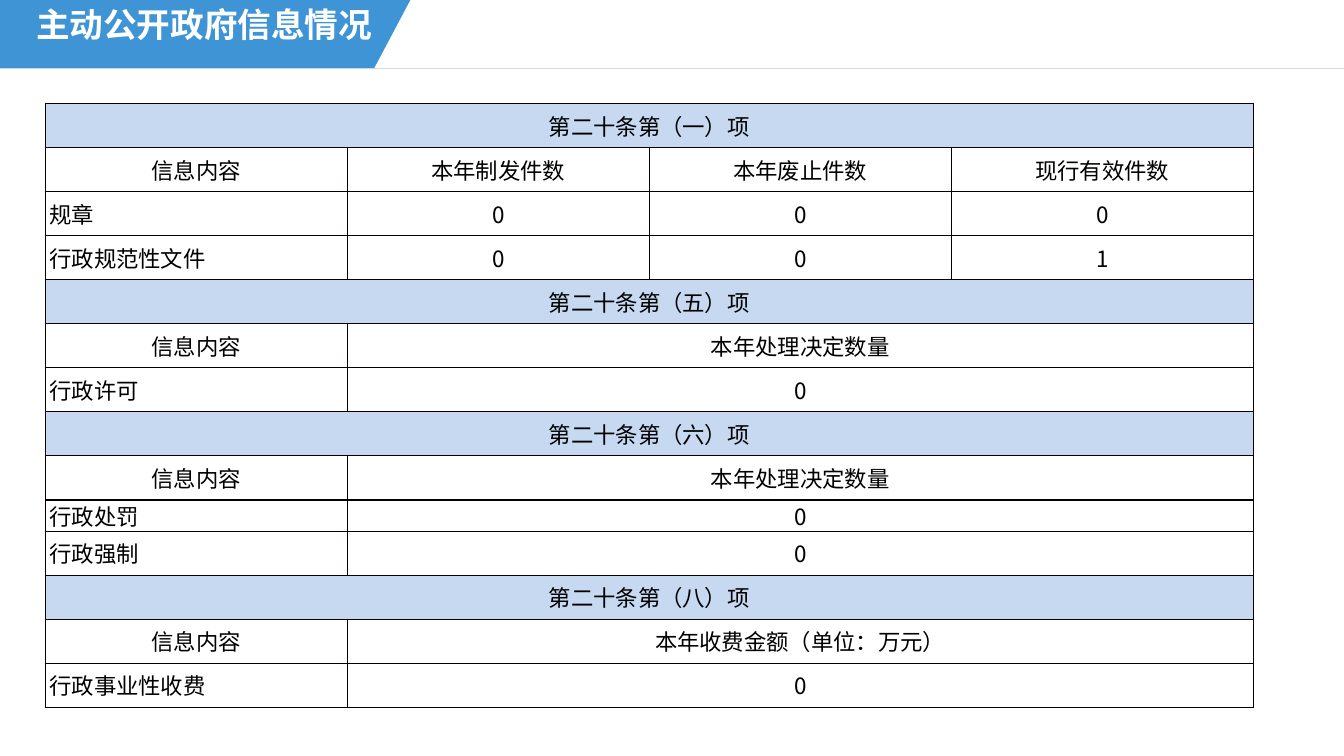
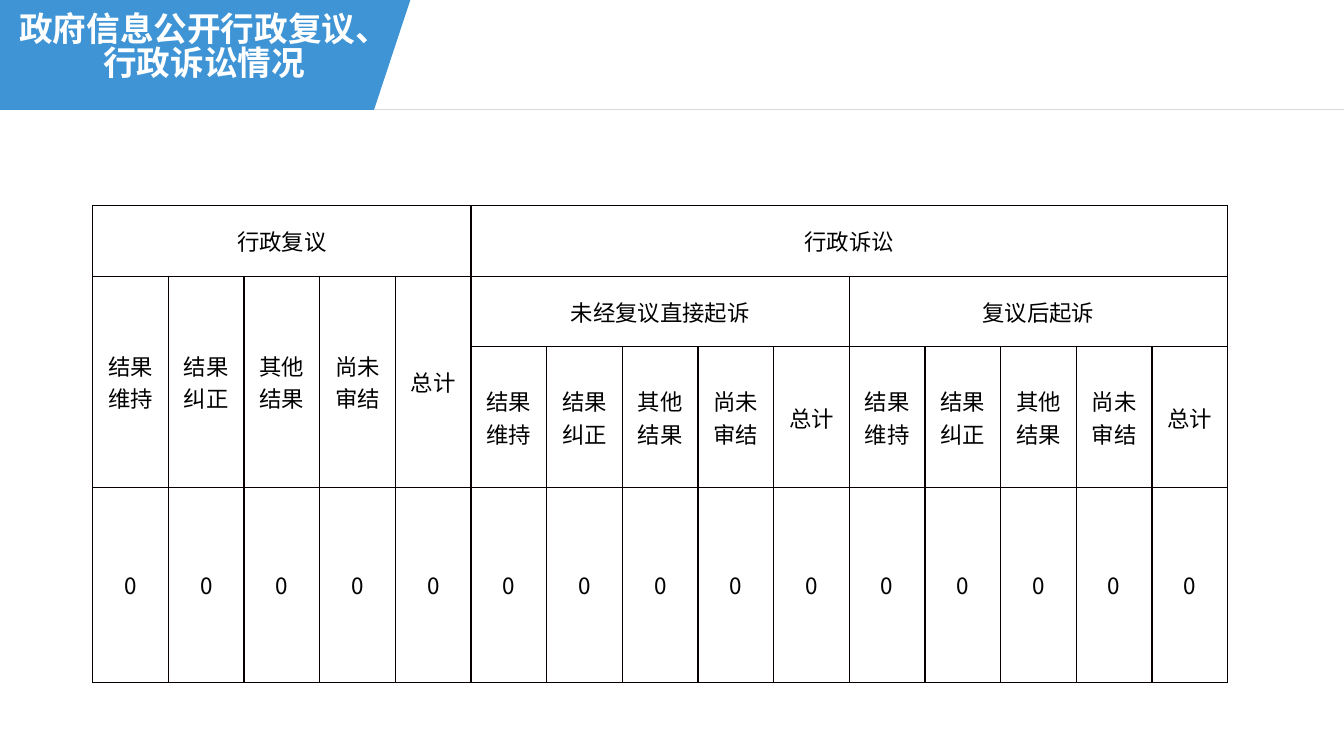
from lxml import etree
from pptx import Presentation
from pptx.dml.color import RGBColor
from pptx.enum.shapes import MSO_CONNECTOR
from pptx.enum.text import MSO_ANCHOR, PP_ALIGN
from pptx.oxml import parse_xml
from pptx.oxml.ns import nsdecls, qn
from pptx.util import Inches, Pt

STRAIGHT = MSO_CONNECTOR.STRAIGHT
MIDDLE = MSO_ANCHOR.MIDDLE
LEFT, CENTER = PP_ALIGN.LEFT, PP_ALIGN.CENTER

SLIDE_WIDTH, SLIDE_HEIGHT = 13.33, 7.5


def rgb(hex_code):
    return RGBColor.from_string(hex_code)


class Deck:
    """Holds the shared style and the current slide."""

    FONT = "Noto Sans CJK SC"
    BAND, RULE, BORDER = "3F94D5", "D9D9D9", "080000"
    SECTION, TEXT, TITLE = "C6D9F1", "000000", "FFFFFF"
    TITLE_SIZE, CELL_SIZE = 24, 16
    BAND_TOP_WIDTH, BAND_BOTTOM_WIDTH = 4.07, 3.71

    def __init__(self):
        self.presentation = Presentation()
        self.presentation.slide_width = Inches(SLIDE_WIDTH)
        self.presentation.slide_height = Inches(SLIDE_HEIGHT)
        self.slide = None

    def add_slide(self, title, band_height, title_top, title_height):
        blank = self.presentation.slide_layouts[6]
        self.slide = self.presentation.slides.add_slide(blank)
        self.title_band(band_height)
        self.title(title, title_top, title_height)
        self.rule(band_height)

    def style_text(self, paragraph, size, color, align, bold=False):
        paragraph.alignment = align
        for run in paragraph.runs:
            run.font.size = Pt(size)
            run.font.bold = bold
            run.font.color.rgb = rgb(color)
            run.font.name = self.FONT
            east_asian = etree.SubElement(run.font._element, qn("a:ea"))
            east_asian.set("typeface", self.FONT)

    def title_band(self, height):
        corners = [(self.BAND_TOP_WIDTH, 0), (self.BAND_BOTTOM_WIDTH, height), (0, height)]
        outline = self.slide.shapes.build_freeform(0, 0)
        outline.add_line_segments([(Inches(x), Inches(y)) for x, y in corners], close=True)
        band = outline.convert_to_shape()
        band.shadow.inherit = False
        band.fill.solid()
        band.fill.fore_color.rgb = rgb(self.BAND)
        band.line.fill.background()

    def title(self, text, top, height):
        box = self.slide.shapes.add_textbox(Inches(0.11), Inches(top), Inches(3.83), Inches(height))
        frame = box.text_frame
        frame.word_wrap = True
        frame.margin_left = frame.margin_right = frame.margin_top = frame.margin_bottom = 0
        frame.text = text
        paragraph = frame.paragraphs[0]
        paragraph.line_spacing = 0.85
        self.style_text(paragraph, self.TITLE_SIZE, self.TITLE, CENTER, bold=True)

    def rule(self, y):
        line = self.slide.shapes.add_connector(
            STRAIGHT, Inches(self.BAND_BOTTOM_WIDTH), Inches(y), Inches(SLIDE_WIDTH), Inches(y))
        line.line.color.rgb = rgb(self.RULE)
        line.line.width = Pt(0.5)
        etree.SubElement(line._element.spPr, qn("a:effectLst"))

    def table(self, left, top, width, columns, row_heights, margin):
        frame = self.slide.shapes.add_table(
            len(row_heights), columns, Inches(left), Inches(top),
            Inches(width), Inches(sum(row_heights)))
        table = frame.table
        table.first_row = table.horz_banding = False
        for column in table.columns:
            column.width = Inches(width / columns)
        for row, height in zip(table.rows, row_heights):
            row.height = Inches(height)
        for cell in table.iter_cells():
            cell.margin_left = cell.margin_right = Inches(margin)
            cell.margin_top = cell.margin_bottom = 0
            cell.vertical_anchor = MIDDLE
            self.border(cell)
            cell.fill.background()
        return table

    def border(self, cell):
        properties = cell._tc.get_or_add_tcPr()
        for side in ("lnL", "lnR", "lnT", "lnB"):
            properties.append(parse_xml(
                f'<a:{side} {nsdecls("a")} w="{Pt(1)}"><a:solidFill>'
                f'<a:srgbClr val="{self.BORDER}"/></a:solidFill></a:{side}>'))

    def cell(self, table, row, column, text, rows=1, columns=1, align=CENTER, fill=None):
        cell = table.cell(row, column)
        if rows > 1 or columns > 1:
            cell.merge(table.cell(row + rows - 1, column + columns - 1))
        cell.text_frame.text = text
        self.style_text(cell.text_frame.paragraphs[0], self.CELL_SIZE, self.TEXT, align)
        if fill:
            cell.fill.solid()
            cell.fill.fore_color.rgb = rgb(fill)


def disclosure_slide(deck):
    deck.add_slide("主动公开政府信息情况", 0.68, 0.1, 0.4)

    # Each section: heading, column names, then data rows
    sections = [
        ("第二十条第（一）项", ["本年制发件数", "本年废止件数", "现行有效件数"],
         [["规章", "0", "0", "0"], ["行政规范性文件", "0", "0", "1"]]),
        ("第二十条第（五）项", ["本年处理决定数量"], [["行政许可", "0"]]),
        ("第二十条第（六）项", ["本年处理决定数量"], [["行政处罚", "0"], ["行政强制", "0"]]),
        ("第二十条第（八）项", ["本年收费金额（单位：万元）"], [["行政事业性收费", "0"]]),
    ]
    lines = []
    for heading, names, records in sections:
        lines += [[heading], ["信息内容", *names], *records]

    # One short row; the others share the remaining height
    columns, table_height, short_height = 4, 5.99, 0.31
    full_height = (table_height - short_height) / (len(lines) - 1)
    heights = [short_height if line[0] == "行政处罚" else full_height for line in lines]
    table = deck.table(0.45, 1.03, 11.98, columns, heights, 0.04)

    # The last text of a row spans the columns left over
    for row, line in enumerate(lines):
        is_heading = len(line) == 1
        for column, text in enumerate(line):
            is_last = column == len(line) - 1
            is_label = column == 0 and not is_heading and text != "信息内容"
            deck.cell(table, row, column, text,
                      columns=columns - column if is_last else 1,
                      align=LEFT if is_label else CENTER,
                      fill=deck.SECTION if is_heading else None)


def review_slide(deck):
    deck.add_slide("政府信息公开行政复议、行政诉讼情况", 1.09, 0.14, 0.81)
    outcomes = ["结果维持", "结果纠正", "其他结果", "尚未审结", "总计"]
    group = len(outcomes)
    table = deck.table(0.92, 2.04, 11.26, 3 * group, [0.7, 0.7, 1.4, 1.93], 0.07)

    # Group headings
    deck.cell(table, 0, 0, "行政复议", columns=group)
    deck.cell(table, 0, group, "行政诉讼", columns=2 * group)
    deck.cell(table, 1, group, "未经复议直接起诉", columns=group)
    deck.cell(table, 1, 2 * group, "复议后起诉", columns=group)

    # Outcomes and counts; the first group has no subheading
    for column in range(3 * group):
        row, rows = (1, 2) if column < group else (2, 1)
        deck.cell(table, row, column, outcomes[column % group], rows=rows)
        deck.cell(table, 3, column, "0")


def main():
    deck = Deck()
    disclosure_slide(deck)
    review_slide(deck)
    deck.presentation.save("out.pptx")


if __name__ == "__main__":
    main()
